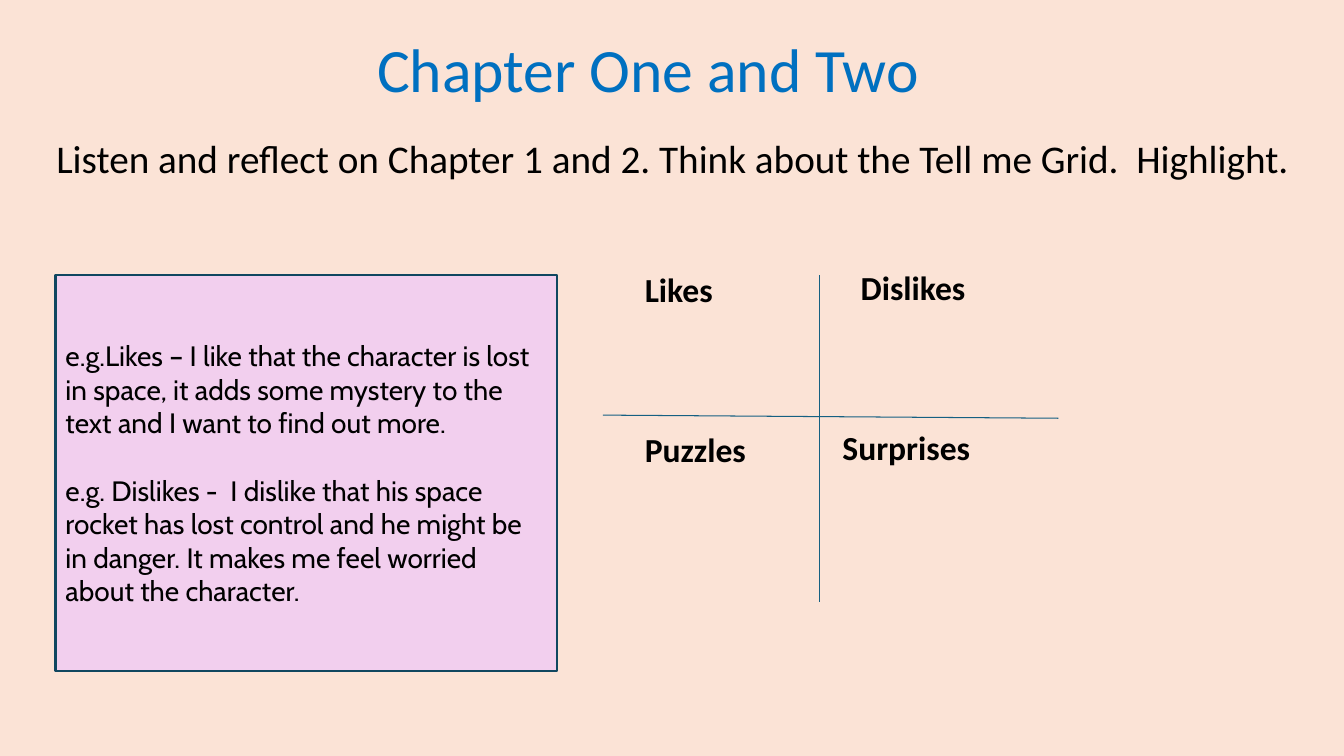
from dataclasses import dataclass

from pptx import Presentation
from pptx.dml.color import RGBColor
from pptx.enum import shapes, text
from pptx.oxml import xmlchemy
from pptx.util import Cm, Pt

BLACK = "000000"
LABEL_SIZE = (7.16, 2.74)
LABEL_FORMAT = {"size": Pt(24), "name": "Calibri", "bold": True}


@dataclass
class Label:
    wording: str
    left: float
    top: float


@dataclass
class GridLine:
    begin: tuple[float, float]
    end: tuple[float, float]


LABELS = [
    Label("Likes", 16, 5.97),
    Label("Dislikes", 21.44, 5.94),
    Label("Puzzles", 16, 10.01),
    Label("Surprises", 20.98, 9.96),
]
GRID_LINES = [
    GridLine((20.65, 6.93), (20.65, 15.16)),
    GridLine((15.19, 10.46), (26.67, 10.54)),
]
EXAMPLES = [
    "e.g.Likes – I like that the character is lost in space, it adds some "
    "mystery to the text and I want to find out more.",
    "e.g. Dislikes -  I dislike that his space rocket has lost control and he "
    "might be in danger. It makes me feel worried about the character.",
]


def colour(value: str) -> RGBColor:
    return RGBColor.from_string(value)


def place(shape, left: float, top: float, width: float, height: float) -> None:
    shape.left, shape.top = Cm(left), Cm(top)
    shape.width, shape.height = Cm(width), Cm(height)


def write(shape, paragraphs: list[str], font_format: dict, font_colour: str = BLACK,
          anchor=text.MSO_ANCHOR.MIDDLE, **paragraph_format) -> None:
    """Fill a shape with paragraphs that share one format."""
    frame = shape.text_frame
    frame.text = "\n".join(paragraphs)
    frame.word_wrap = True
    frame.auto_size = text.MSO_AUTO_SIZE.NONE
    frame.vertical_anchor = anchor
    for paragraph in frame.paragraphs:
        for name, value in paragraph_format.items():
            setattr(paragraph, name, value)
        for run in paragraph.runs:
            for name, value in font_format.items():
                setattr(run.font, name, value)
            run.font.color.rgb = colour(font_colour)


def add_text(slide, *box: float):
    return slide.shapes.add_textbox(*map(Cm, box))


def add_title(slide) -> None:
    title = slide.shapes.title
    place(title, 6.45, 0, 20.55, 3.68)
    write(title, ["Chapter One and Two"], {"size": Pt(44), "name": "Calibri"},
          "0070C0", alignment=text.PP_ALIGN.CENTER, line_spacing=0.9)
    title.text_frame.margin_right = Cm(1.03)


def add_instruction(slide) -> None:
    instruction = add_text(slide, 1.17, 3.48, 32.03, 15.16)
    write(instruction,
          ["Listen and reflect on Chapter 1 and 2. Think about the Tell me Grid.  Highlight."],
          {"size": Pt(28), "name": "Calibri"},
          anchor=text.MSO_ANCHOR.TOP, line_spacing=0.8)


def add_grid_line(slide, grid_line: GridLine) -> None:
    connector = slide.shapes.add_connector(
        shapes.MSO_CONNECTOR.STRAIGHT, *map(Cm, grid_line.begin + grid_line.end))
    connector.line.color.rgb = colour("156082")
    connector.line.width = Pt(0.75)
    connector._element.spPr.append(xmlchemy.OxmlElement("a:effectLst"))


def add_label(slide, label: Label) -> None:
    box = add_text(slide, label.left, label.top, *LABEL_SIZE)
    write(box, [label.wording], LABEL_FORMAT, line_spacing=0.9)


def add_examples(slide) -> None:
    panel = slide.shapes.add_shape(
        shapes.MSO_SHAPE.RECTANGLE, *map(Cm, (1.4, 6.93, 12.65, 9.98)))
    panel.shadow.inherit = False
    panel.fill.solid()
    panel.fill.fore_color.rgb = colour("F2CFEE")
    panel.line.color.rgb = colour("104760")
    panel.line.width = Pt(1.5)
    write(panel, EXAMPLES, {"size": Pt(20), "name": "Cabin"},
          alignment=text.PP_ALIGN.LEFT)
    panel.text_frame.paragraphs[1].space_before = Pt(24)


def main() -> None:
    presentation = Presentation()
    presentation.slide_width, presentation.slide_height = Cm(33.87), Cm(19.05)
    slide = presentation.slides.add_slide(presentation.slide_layouts[5])
    slide.background.fill.solid()
    slide.background.fill.fore_color.rgb = colour("FBE3D6")

    add_title(slide)
    add_instruction(slide)
    for grid_line in GRID_LINES:
        add_grid_line(slide, grid_line)
    for label in LABELS:
        add_label(slide, label)
    add_examples(slide)
    presentation.save("out.pptx")


if __name__ == "__main__":
    main()
